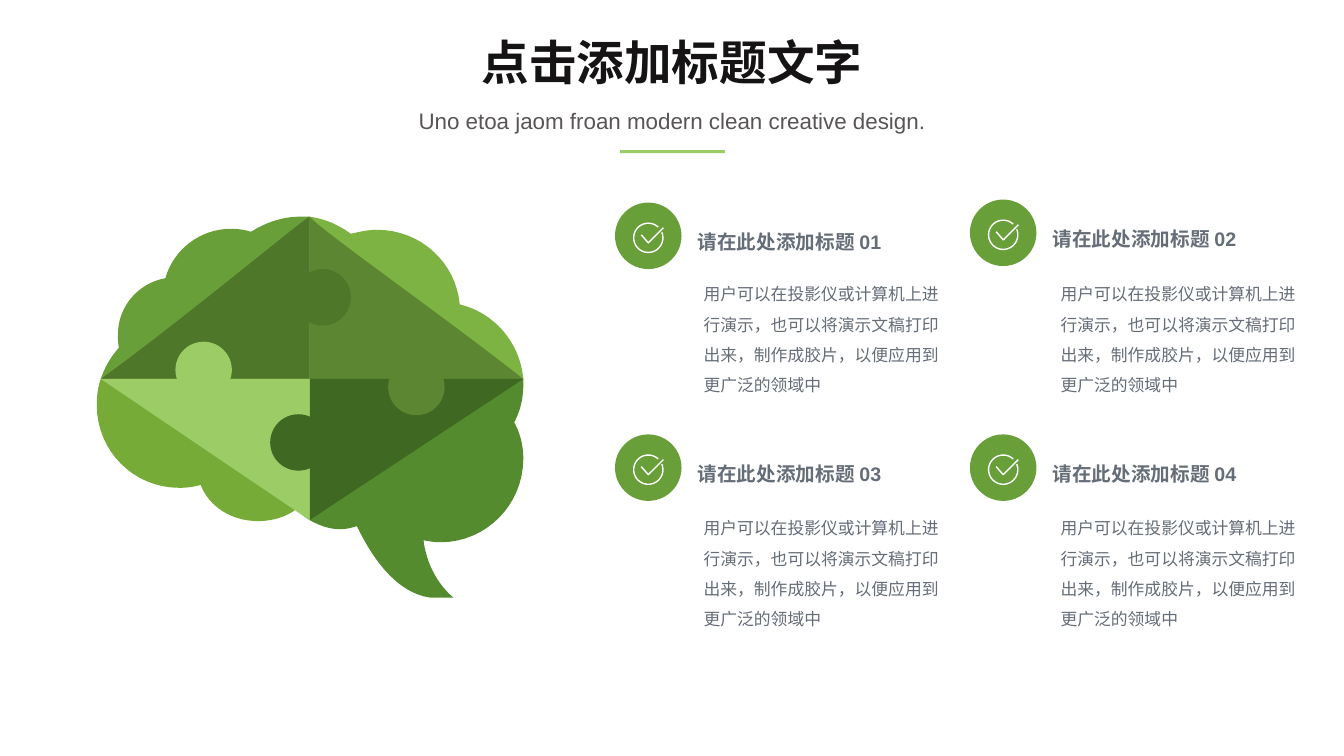
import math

import pptx
import pptx.dml.color
import pptx.enum.shapes
import pptx.enum.text
import pptx.util

SHAPES = pptx.enum.shapes.MSO_SHAPE
ALIGN = pptx.enum.text.PP_ALIGN
ANCHOR = pptx.enum.text.MSO_ANCHOR
Inches = pptx.util.Inches

SLIDE_WIDTH, SLIDE_HEIGHT = 13.33, 7.5
GREEN, LIGHT_GREEN, GREY, WHITE = "689F38", "9CCC65", "656D78", "FFFFFF"
BADGE_SIZE = 0.66
COLUMN_LEFT, COLUMN_PITCH = 6.1, 3.52
ROW_TOP, ROW_PITCH = 1.98, 2.33
BODY_LEFT, BODY_TOP = 6.88, 2.67
BODY_COLUMN_PITCH, BODY_ROW_PITCH = 3.54, 2.32
BODY = "用户可以在投影仪或计算机上进行演示，也可以将演示文稿打印出来，制作成胶片，以便应用到更广泛的领域中"

TOP, RIGHT, BOTTOM, LEFT = (3.07, 2.15), (5.19, 3.76), (3.07, 5.16), (1, 3.76)
CENTRE = (3.07, 3.76)

# Each quarter: start, lobe curves, inner edge back to the start, lobe and inner colours.
# A curve is two control points and an end point; a pair is a straight step.
QUARTERS = [
    (RIGHT,
     [(5.16, 3.4, 4.9, 3.1, 4.56, 3.02), (4.52, 2.6, 4.17, 2.28, 3.74, 2.28),
      (3.65, 2.28, 3.56, 2.3, 3.48, 2.32), (3.36, 2.23, 3.22, 2.17, *TOP)],
     [(3.19, 2.29, 4.39, 3.13, *RIGHT)], "7CB342", "5C8631"),
    (TOP,
     [(3.04, 2.15, 3.01, 2.15, 2.97, 2.15), (2.8, 2.15, 2.63, 2.21, 2.49, 2.3),
      (2.43, 2.28, 2.36, 2.27, 2.29, 2.27), (1.98, 2.27, 1.72, 2.48, 1.64, 2.76),
      (1.37, 2.81, 1.17, 3.04, 1.17, 3.32), (1.17, 3.36, 1.17, 3.41, 1.18, 3.45),
      (1.1, 3.54, 1.04, 3.64, *LEFT)],
     [(1.74, 3.23, 3.04, 2.15, *TOP)], GREEN, "4E7729"),
    (RIGHT,
     [(5.19, 3.78, 5.19, 3.8, 5.19, 3.82), (5.19, 3.95, 5.16, 4.08, 5.1, 4.19),
      (5.16, 4.3, 5.19, 4.42, 5.19, 4.55), (5.19, 5.01, 4.82, 5.38, 4.37, 5.38),
      (4.31, 5.38, 4.25, 5.37, 4.2, 5.36), (4.25, 5.75, 4.5, 5.93, 4.5, 5.93),
      (4.27, 5.93), (3.9, 5.88, 3.66, 5.47, 3.54, 5.22),
      (3.48, 5.24, 3.43, 5.25, 3.37, 5.25), (3.26, 5.25, 3.16, 5.21, *BOTTOM)],
     [RIGHT], "558B2F", "3F6823"),
    (LEFT,
     [(0.97, 3.84, 0.96, 3.93, 0.96, 4.02), (0.96, 4.47, 1.32, 4.84, 1.78, 4.84),
      (1.85, 4.84, 1.93, 4.83, 1.99, 4.81), (2.07, 5.02, 2.29, 5.17, 2.56, 5.17),
      (2.7, 5.17, 2.84, 5.13, 2.94, 5.05), (2.98, 5.09, 3.02, 5.13, *BOTTOM)],
     [LEFT], "76AB38", LIGHT_GREEN),
]
KNOBS = [(3.85, 3.56, "5C8631"), (2.92, 2.67, "4E7729"),
         (1.74, 3.39, LIGHT_GREEN), (2.68, 4.11, "3F6823")]


def color(value):
    return pptx.dml.color.RGBColor.from_string(value)


def paint(shape, fill):
    shape.shadow.inherit = False
    shape.fill.solid()
    shape.fill.fore_color.rgb = color(fill)
    shape.line.fill.background()


def add_filled(slide, kind, left, top, width, height, fill):
    shape = slide.shapes.add_shape(
        kind, Inches(left), Inches(top), Inches(width), Inches(height))
    paint(shape, fill)
    return shape


def add_text(slide, box, text, size, ink, bold=False, spacing=1.0,
             align=ALIGN.LEFT, anchor=ANCHOR.TOP, insets=(0, 0)):
    shape = slide.shapes.add_textbox(*(Inches(length) for length in box))
    frame = shape.text_frame
    frame.word_wrap = True
    frame.vertical_anchor = anchor
    frame.margin_left = frame.margin_right = Inches(insets[0])
    frame.margin_top = frame.margin_bottom = Inches(insets[1])
    frame.text = text
    paragraph = frame.paragraphs[0]
    paragraph.alignment = align
    paragraph.line_spacing = spacing
    font = paragraph.runs[0].font
    font.name, font.size, font.bold = "Arial", pptx.util.Pt(size), bold
    font.color.rgb = color(ink)


def flatten(start, steps, count=16):
    """Return the points along straight steps and cubic curves."""
    points = [start]
    for step in steps:
        if len(step) == 2:
            points.append(step)
            continue
        corners = [points[-1], step[0:2], step[2:4], step[4:6]]
        for index in range(1, count + 1):
            t = index / count
            weights = [math.comb(3, k) * t ** k * (1 - t) ** (3 - k) for k in range(4)]
            points.append(tuple(
                sum(weight * corner[axis] for weight, corner in zip(weights, corners))
                for axis in (0, 1)))
    return points


def add_outline(slide, contours, close):
    """Build one shape from contours in inches; the builder needs whole units."""
    first, *others = [[(Inches(x), Inches(y)) for x, y in contour]
                      for contour in contours]
    builder = slide.shapes.build_freeform(*first[0])
    builder.add_line_segments(first[1:], close=close)
    for contour in others:
        builder.move_to(*contour[0])
        builder.add_line_segments(contour[1:], close=close)
    return builder.convert_to_shape()


def add_brain(slide):
    for start, lobes, inner_edge, lobe_fill, inner_fill in QUARTERS:
        outline = flatten(start, lobes)
        paint(add_outline(slide, [outline + [CENTRE]], True), lobe_fill)
        inner = flatten(outline[-1], inner_edge)
        paint(add_outline(slide, [inner + [CENTRE]], True), inner_fill)
    for left, top, fill in KNOBS:
        add_filled(slide, SHAPES.OVAL, left, top, 0.56, 0.56, fill)


def add_check(slide, x, y):
    """Draw a ring, open at the upper right, with a tick about the point x, y."""
    radius = 0.145
    angles = [math.radians(-22 + 335 * step / 60) for step in range(61)]
    ring = [(x + radius * math.cos(angle), y + radius * math.sin(angle))
            for angle in angles]
    tick = [(x - 0.07, y - 0.03), (x, y + 0.05), (x + 0.15, y - 0.1)]
    check = add_outline(slide, [ring, tick], False)
    check.shadow.inherit = False
    check.fill.background()
    check.line.color.rgb = color(WHITE)
    check.line.width = pptx.util.Pt(1)


def add_item(slide, index):
    row, column = divmod(index, 2)
    left = COLUMN_LEFT + column * COLUMN_PITCH
    top = ROW_TOP + row * ROW_PITCH + (0.03 if index == 0 else 0)
    badge = add_filled(slide, SHAPES.ROUNDED_RECTANGLE, left, top,
                       BADGE_SIZE, BADGE_SIZE, GREEN)
    badge.adjustments[0] = 0.5
    add_text(slide, (left + 0.82, top + 0.21, 1.93, 0.28),
             f"请在此处添加标题 {index + 1:02}", 14, GREY, bold=True,
             spacing=1.3, anchor=ANCHOR.MIDDLE)
    add_check(slide, left + BADGE_SIZE / 2, top + BADGE_SIZE / 2 + 0.02)
    body_box = (BODY_LEFT + column * BODY_COLUMN_PITCH,
                BODY_TOP + row * BODY_ROW_PITCH, 2.55, 1.01)
    add_text(slide, body_box, BODY, 12, GREY, spacing=1.5, insets=(0.1, 0.05))


def add_header(slide):
    width = 11.94
    left = (SLIDE_WIDTH - width) / 2
    add_text(slide, (left, 0.42, width, 0.63), "点击添加标题文字", 34, "151314",
             bold=True, spacing=0.8, align=ALIGN.CENTER, insets=(0.02, 0.02))
    add_text(slide, (left, 1.04, width, 0.31),
             "Uno etoa jaom froan modern clean creative design.", 16, "595457",
             align=ALIGN.CENTER, insets=(0.02, 0.02))
    add_filled(slide, SHAPES.RECTANGLE, 6.15, 1.49, 1.04, 0.03, LIGHT_GREEN)


def main():
    presentation = pptx.Presentation()
    presentation.slide_width = Inches(SLIDE_WIDTH)
    presentation.slide_height = Inches(SLIDE_HEIGHT)
    slide = presentation.slides.add_slide(presentation.slide_layouts[6])
    add_brain(slide)
    for index in range(4):
        add_item(slide, index)
    add_header(slide)
    presentation.save("out.pptx")


if __name__ == "__main__":
    main()
